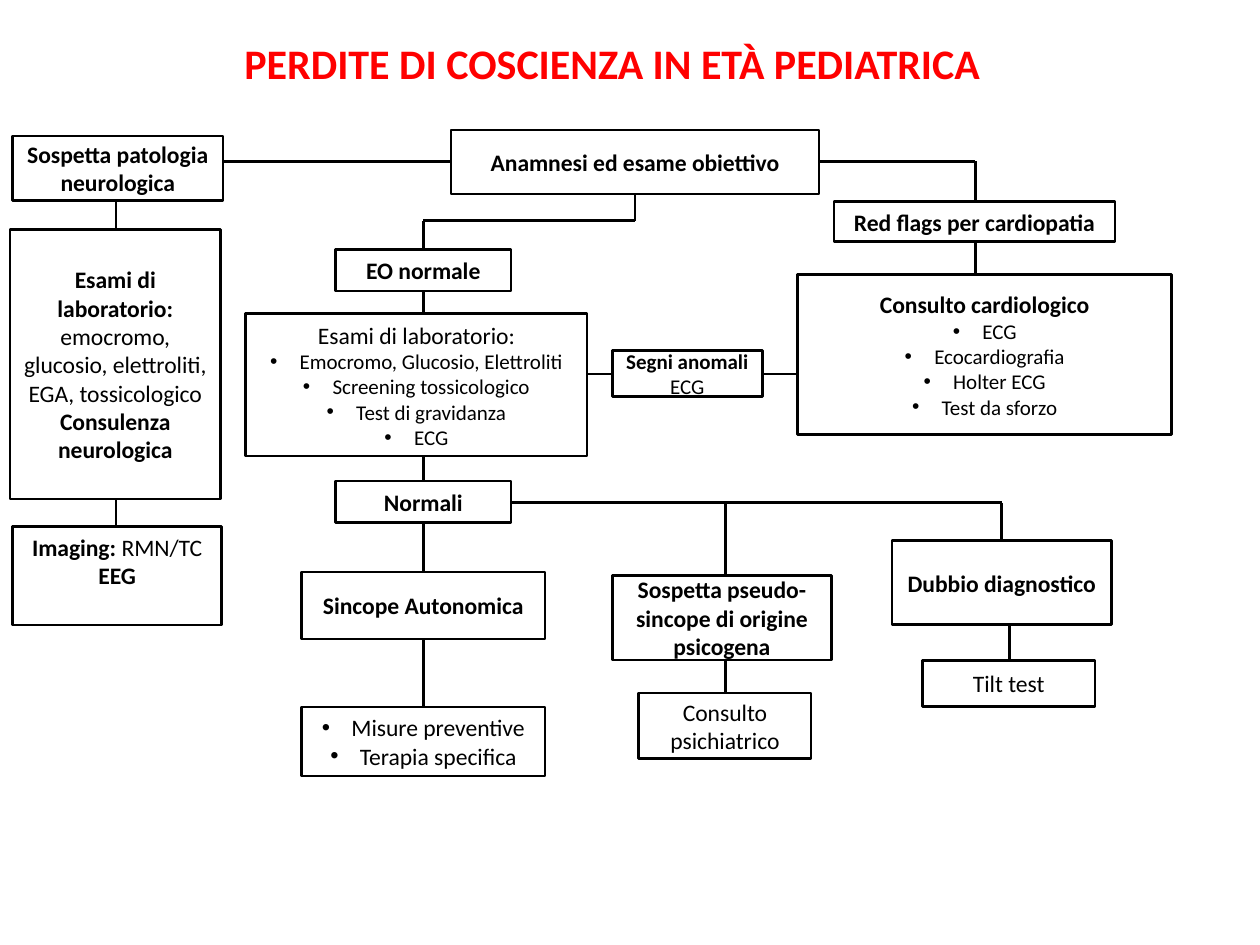
from itertools import pairwise

from lxml import etree
from pptx import Presentation
from pptx.dml.color import RGBColor
from pptx.enum.shapes import MSO_CONNECTOR, MSO_SHAPE
from pptx.enum.text import MSO_ANCHOR, PP_ALIGN
from pptx.oxml.ns import qn
from pptx.util import Pt

RECT = MSO_SHAPE.RECTANGLE
STRAIGHT = MSO_CONNECTOR.STRAIGHT
MIDDLE, TOP = MSO_ANCHOR.MIDDLE, MSO_ANCHOR.TOP
CENTER = PP_ALIGN.CENTER
COLORS = {"ink": "000000", "paper": "FFFFFF", "title": "FF0000"}
FONT = "Calibri"
BODY, SMALL = 13.5, 12
BULLET = "• "


def rgb(name):
    return RGBColor.from_string(COLORS[name])


def set_bullet(p):
    pPr = p._p.get_or_add_pPr()
    pPr.set("marL", str(Pt(16.9)))
    pPr.set("indent", str(-Pt(16.9)))
    etree.SubElement(pPr, qn("a:buFont"), typeface="Arial")
    etree.SubElement(pPr, qn("a:buChar"), char=BULLET.strip())


def write(sp, text, size=BODY, bullet_size=SMALL, color="ink", anchor=MIDDLE):
    """One paragraph per line; asterisks switch bold on and off."""
    tf = sp.text_frame
    tf.word_wrap = True
    tf.vertical_anchor = anchor
    for i, line in enumerate(text.split("\n")):
        p = tf.paragraphs[0] if i == 0 else tf.add_paragraph()
        p.alignment = CENTER
        bulleted = line.startswith(BULLET)
        if bulleted:
            set_bullet(p)
        for j, part in enumerate(line.removeprefix(BULLET).split("*")):
            if not part:
                continue
            r = p.add_run()
            r.text = part
            r.font.name = FONT
            r.font.size = Pt(bullet_size if bulleted else size)
            r.font.bold = j % 2 == 1
            r.font.color.rgb = rgb(color)


def add_box(s, x, y, w, h, text, **fmt):
    sp = s.shapes.add_shape(RECT, Pt(x), Pt(y), Pt(w), Pt(h))
    sp.shadow.inherit = False
    sp.fill.solid()
    sp.fill.fore_color.rgb = rgb("paper")
    sp.line.color.rgb = rgb("ink")
    sp.line.width = Pt(1.5)
    write(sp, text, **fmt)


def add_path(s, *points):
    """Straight connectors from each point to the next."""
    for (x1, y1), (x2, y2) in pairwise(points):
        c = s.shapes.add_connector(STRAIGHT, Pt(x1), Pt(y1), Pt(x2), Pt(y2))
        c.line.color.rgb = rgb("ink")
        c.line.width = Pt(1.5)
        etree.SubElement(c._element.spPr, qn("a:effectLst"))


def add_title(s, x, y, w, h):
    sp = s.shapes.add_textbox(Pt(x), Pt(y), Pt(w), Pt(h))
    write(sp, "*PERDITE DI COSCIENZA IN ETÀ PEDIATRICA*", size=24, color="title")


def add_links(s):
    """Connectors between the regions."""
    add_path(s, (71.3, 92.2), (257.8, 92.2))
    add_path(s, (362.9, 110.9), (362.9, 126), (241.9, 126), (241.9, 145.4))
    add_path(s, (468, 92.2), (557.3, 92.2), (557.3, 115.2))
    add_path(s, (336, 213.8), (349.9, 213.8))
    add_path(s, (435.6, 213.8), (455.8, 213.8))
    add_path(s, (291.6, 287.3), (572.4, 287.3), (572.4, 308.9))
    add_path(s, (414.7, 287.3), (414.7, 329))


def neurology(s, x, y, w):
    axis = x + 60.5
    add_box(s, x + 1.4, y, w, 36.7, "*Sospetta patologia neurologica*")
    add_path(s, (axis, y + 37.4), (axis, y + 52.6))
    add_box(s, x, y + 53.3, w, 154.1,
            "*Esami di laboratorio: *emocromo, glucosio, elettroliti, EGA, "
            "tossicologico\n*Consulenza neurologica*")
    add_path(s, (axis, y + 208), (axis, y + 223.2))
    add_box(s, x + 1.4, y + 223.2, w - 0.7, 56.2,
            "*Imaging: *RMN/TC\n*EEG*", anchor=TOP)


def normal_exam(s, x, y, w):
    axis = x + 101.5
    for top, bottom in ((23.8, 36.7), (118.1, 132.4), (156.2, 184.3), (222.5, 261.3)):
        add_path(s, (axis, y + top), (axis, y + bottom))
    add_box(s, x, y + 36.7, w, 81.4,
            "Esami di laboratorio:\n• Emocromo, Glucosio, Elettroliti\n"
            "• Screening tossicologico\n• Test di gravidanza\n• ECG")
    for dy, bw, bh, text in (
        (0, 100.1, 23.8, "*EO normale*"),
        (132.4, 100.1, 23.8, "*Normali*"),
        (184.3, 139, 38.2, "*Sincope Autonomica*"),
        (261.3, 139, 39.6, "• Misure preventive\n• Terapia specifica"),
    ):
        add_box(s, axis - bw / 2, y + dy, bw, bh, text, bullet_size=BODY)


def cardiology(s, x, y, w):
    axis = x + 101.5
    add_box(s, x + 20.8, y, 160.6, 23, "*Red flags per cardiopatia*")
    add_path(s, (axis, y + 23), (axis, y + 41.8))
    add_box(s, x, y + 41.8, w, 91.4,
            "*Consulto cardiologico*\n• ECG\n• Ecocardiografia\n"
            "• Holter ECG\n• Test da sforzo")


def outcome(s, x, y, finding, action, dx, dy, action_h):
    """A finding with the action that follows it, set dx, dy from its corner."""
    axis = x + dx + 49.7
    add_box(s, x, y, 125.3, 48.2, finding)
    add_path(s, (axis, y + 48.2), (axis, y + dy))
    add_box(s, x + dx, y + dy, 98.6, action_h, action)


def main():
    prs = Presentation()
    prs.slide_width, prs.slide_height = Pt(720), Pt(540)
    s = prs.slides.add_slide(prs.slide_layouts[6])
    add_title(s, 114.5, 18, 470.9, 36)
    add_links(s)
    add_box(s, 257.8, 74.2, 210.2, 36.7, "*Anamnesi ed esame obiettivo*")
    neurology(s, 5.8, 77.8, 120.2)
    normal_exam(s, 140.4, 142.6, 195.1)
    add_box(s, 349.9, 200.2, 85.7, 26.6, "*Segni anomali *ECG", size=SMALL)
    cardiology(s, 455.8, 115.2, 213.8)
    outcome(s, 349.9, 329, "*Sospetta pseudo-sincope di origine psicogena*",
            "Consulto psichiatrico", 15.1, 67, 37.4)
    outcome(s, 509.8, 308.9, "*Dubbio diagnostico*", "Tilt test", 17.3, 68.4, 26.6)
    prs.save("out.pptx")


if __name__ == "__main__":
    main()
